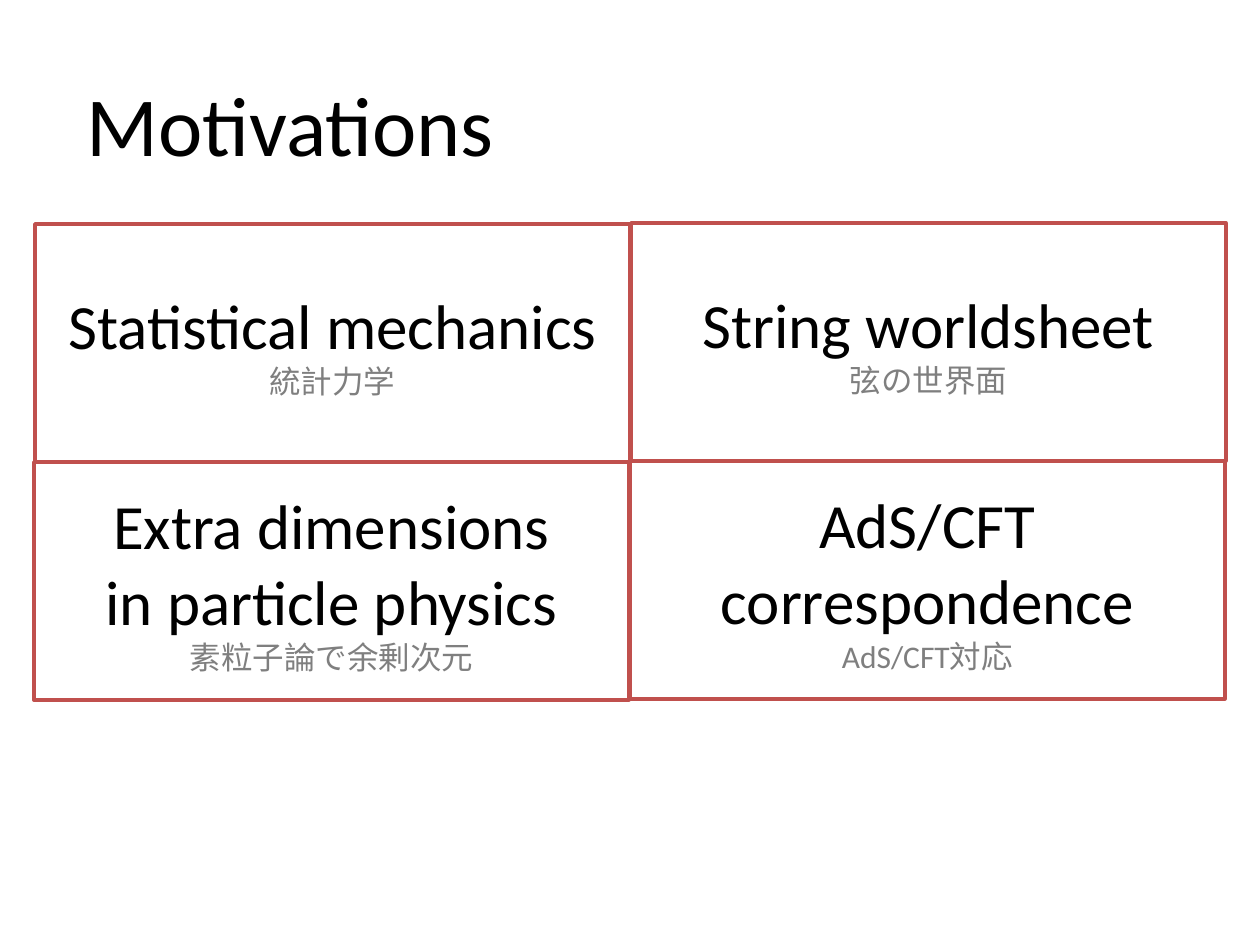
"""Build the Motivations slide: a title above a two-by-two grid of topics."""
from pptx import Presentation
from pptx.dml.color import RGBColor
from pptx.enum.shapes import MSO_SHAPE
from pptx.enum.text import MSO_ANCHOR, MSO_AUTO_SIZE, PP_ALIGN
from pptx.util import Emu, Pt

TITLE = "Motivations"
TOPICS = [
    [(["Statistical mechanics"], "統計力学"), (["String worldsheet"], "弦の世界面")],
    [(["Extra dimensions", "in particle physics"], "素粒子論で余剰次元"),
     (["AdS/CFT correspondence"], "AdS/CFT対応")],
]
COLORS = {"text": "000000", "subtitle": "7F7F7F", "fill": "FFFFFF", "line": "C0504D"}
FONT = "Calibri"
SCALE = 914400 / 126
GRID_LEFT, GRID_TOP = 35, 224
BOX_WIDTH, BOX_HEIGHT = 595, 238
COLUMN_STEP, ROW_STEP = (596, -1), (-1, 238)


def px(length):
    return Emu(round(length * SCALE))


def color(name):
    return RGBColor.from_string(COLORS[name])


def write(paragraph, text, size=36, color_name="text", align=PP_ALIGN.CENTER):
    paragraph.alignment = align
    run = paragraph.add_run()
    run.text = text
    run.font.name = FONT
    run.font.size = Pt(size)
    run.font.color.rgb = color(color_name)


def add_topic(slide, left, top, lines, subtitle):
    shape = slide.shapes.add_shape(
        MSO_SHAPE.RECTANGLE, px(left), px(top), px(BOX_WIDTH), px(BOX_HEIGHT))
    shape.shadow.inherit = False
    shape.fill.solid()
    shape.fill.fore_color.rgb = color("fill")
    shape.line.color.rgb = color("line")
    shape.line.width = Pt(2)
    frame = shape.text_frame
    frame.word_wrap = True
    frame.vertical_anchor = MSO_ANCHOR.MIDDLE
    write(frame.paragraphs[0], lines[0])
    for line in lines[1:]:
        write(frame.add_paragraph(), line)
    write(frame.add_paragraph(), subtitle, size=18, color_name="subtitle")


def add_title(slide):
    title = slide.shapes.title
    title.left, title.top, title.width, title.height = map(px, (74, 66, 438, 115))
    frame = title.text_frame
    frame.word_wrap = False
    frame.auto_size = MSO_AUTO_SIZE.SHAPE_TO_FIT_TEXT
    frame.vertical_anchor = MSO_ANCHOR.TOP
    write(frame.paragraphs[0], TITLE, size=48, align=PP_ALIGN.LEFT)


def main():
    presentation = Presentation()
    presentation.slide_width, presentation.slide_height = px(1260), px(945)
    slide = presentation.slides.add_slide(presentation.slide_layouts[5])
    add_title(slide)
    for row, topics in enumerate(TOPICS):
        for column, (lines, subtitle) in enumerate(topics):
            left = GRID_LEFT + column * COLUMN_STEP[0] + row * ROW_STEP[0]
            top = GRID_TOP + column * COLUMN_STEP[1] + row * ROW_STEP[1]
            add_topic(slide, left, top, lines, subtitle)
    presentation.save("out.pptx")


if __name__ == "__main__":
    main()
